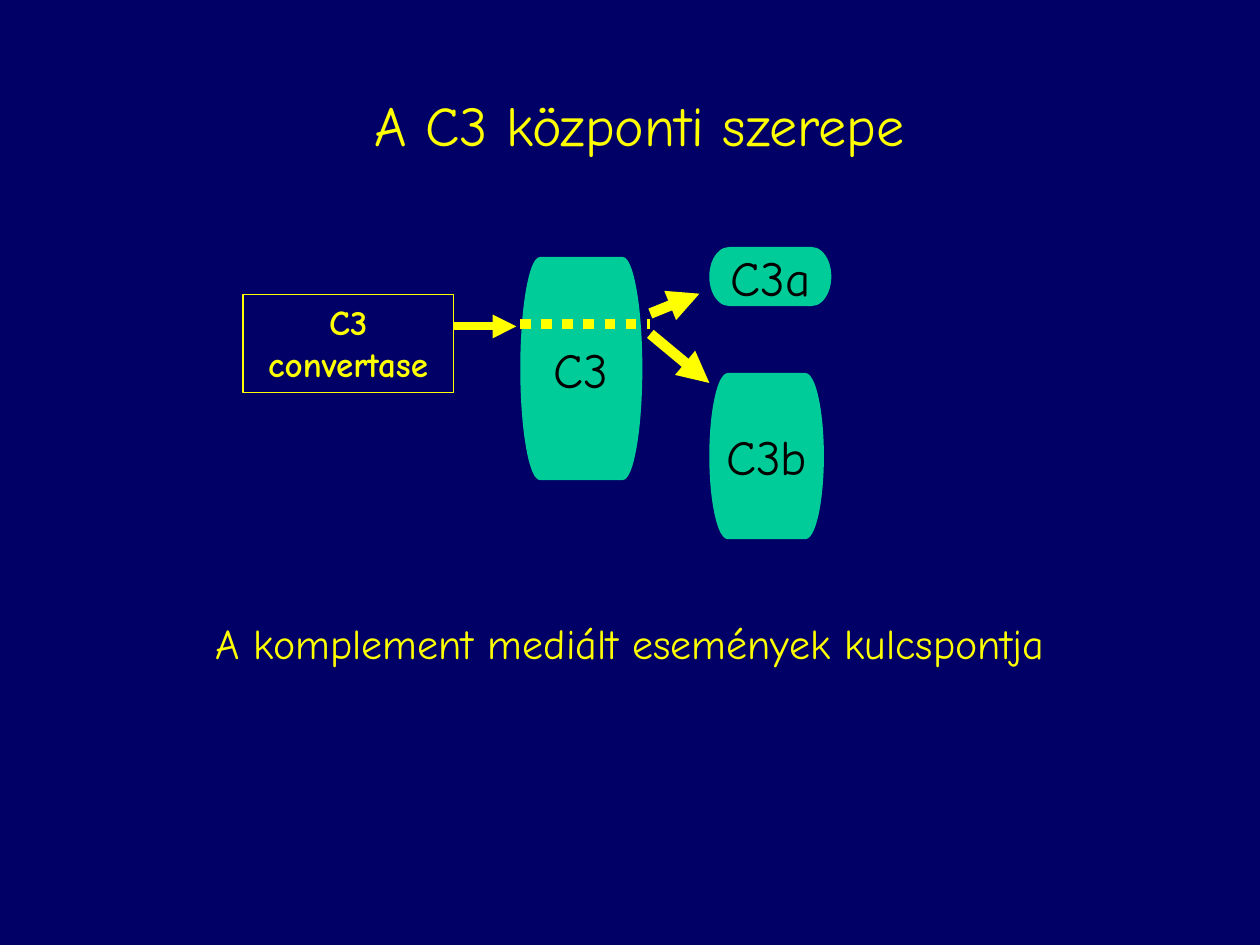
from dataclasses import dataclass
from lxml import etree
from pptx import Presentation
from pptx.dml.color import RGBColor
from pptx.enum import dml, shapes, text
from pptx.oxml import ns
from pptx.util import Cm, Pt


@dataclass(frozen=True)
class Theme:
    font: str = "Comic Neue"
    back: RGBColor = RGBColor(0, 0, 0x66)
    bright: RGBColor = RGBColor(0xFF, 0xFF, 0)
    green: RGBColor = RGBColor(0, 0xCC, 0x99)
    dark: RGBColor = RGBColor(0, 0, 0)
    title: int = 32
    protein: int = 28
    note: int = 24
    label: int = 20


THEME = Theme()


def write(shape, words, size, color, bold=False, wrap=True):
    frame = shape.text_frame
    frame.word_wrap = wrap
    para = frame.paragraphs[0]
    para.text = words
    para.alignment = text.PP_ALIGN.CENTER
    font = para.font
    font.name, font.size, font.bold = THEME.font, Pt(size), bold
    font.color.rgb = color


def caption(canvas, box, words, size):
    shape = canvas.add_textbox(*map(Cm, box))
    write(shape, words, size, THEME.bright)


def protein(canvas, box, name):
    kind = shapes.MSO_SHAPE.FLOWCHART_TERMINATOR
    shape = canvas.add_shape(kind, *map(Cm, box))
    shape.shadow.inherit = False
    shape.fill.solid()
    shape.fill.fore_color.rgb = THEME.green
    shape.line.fill.background()
    shape.text_frame.vertical_anchor = text.MSO_ANCHOR.MIDDLE
    write(shape, name, THEME.protein, THEME.dark, wrap=False)


def stroke(canvas, start, end, width, head=True):
    """Draw an arrow, or a dotted line when head is False."""
    line = canvas.add_connector(shapes.MSO_CONNECTOR.STRAIGHT,
                                *map(Cm, (*start, *end)))
    line.line.color.rgb = THEME.bright
    line.line.width = Pt(width)
    props = line._element.spPr
    if head:
        tail = etree.SubElement(props.find(ns.qn("a:ln")), ns.qn("a:tailEnd"))
        tail.set("type", "triangle")
    else:
        line.line.dash_style = dml.MSO_LINE.ROUND_DOT
    etree.SubElement(props, ns.qn("a:effectLst"))


def split(canvas, left, top):
    """Place the two fragments and the arrows that lead to them."""
    group = canvas.add_group_shape().shapes
    edge = left + 1.19
    protein(group, (edge, top + 2.54, 2.31, 3.35), "C3b")
    protein(group, (edge, top, 2.46, 1.19), "C3a")
    stroke(group, (left, top + 1.34), (left + 0.99, top + 0.94), 6)
    stroke(group, (left, top + 1.75), (edge, top + 2.74), 6)


def enzyme(canvas, left, top, width, height):
    """Place the convertase box, its arrow and the dotted cut line."""
    group = canvas.add_group_shape().shapes
    shape = group.add_shape(shapes.MSO_SHAPE.RECTANGLE,
                            *map(Cm, (left, top, width, height)))
    shape.shadow.inherit = False
    shape.fill.background()
    shape.line.color.rgb = THEME.bright
    shape.line.width = Pt(0.75)
    shape.text_frame.vertical_anchor = text.MSO_ANCHOR.TOP
    write(shape, "C3 convertase", THEME.label, THEME.bright, bold=True)
    right = left + width
    stroke(group, (right, top + 0.64), (right + 1.27, top + 0.64), 4.5)
    stroke(group, (right + 1.35, top + 0.59), (right + 3.97, top + 0.59), 6,
           head=False)


def main():
    deck = Presentation()
    deck.slide_width, deck.slide_height = Cm(25.4), Cm(19.05)
    slide = deck.slides.add_slide(deck.slide_layouts[6])
    slide.background.fill.solid()
    slide.background.fill.fore_color.rgb = THEME.back
    canvas = slide.shapes
    caption(canvas, (1.27, 1.7, 23.24, 1.6), "A C3 központi szerepe",
            THEME.title)
    protein(canvas, (10.49, 5.18, 2.46, 4.5), "C3")
    split(canvas, 13.11, 4.98)
    enzyme(canvas, 4.9, 5.94, 4.24, 1.98)
    caption(canvas, (0, 12.32, 25.4, 1.27),
            "A komplement mediált események kulcspontja", THEME.note)
    deck.save("out.pptx")


if __name__ == "__main__":
    main()
